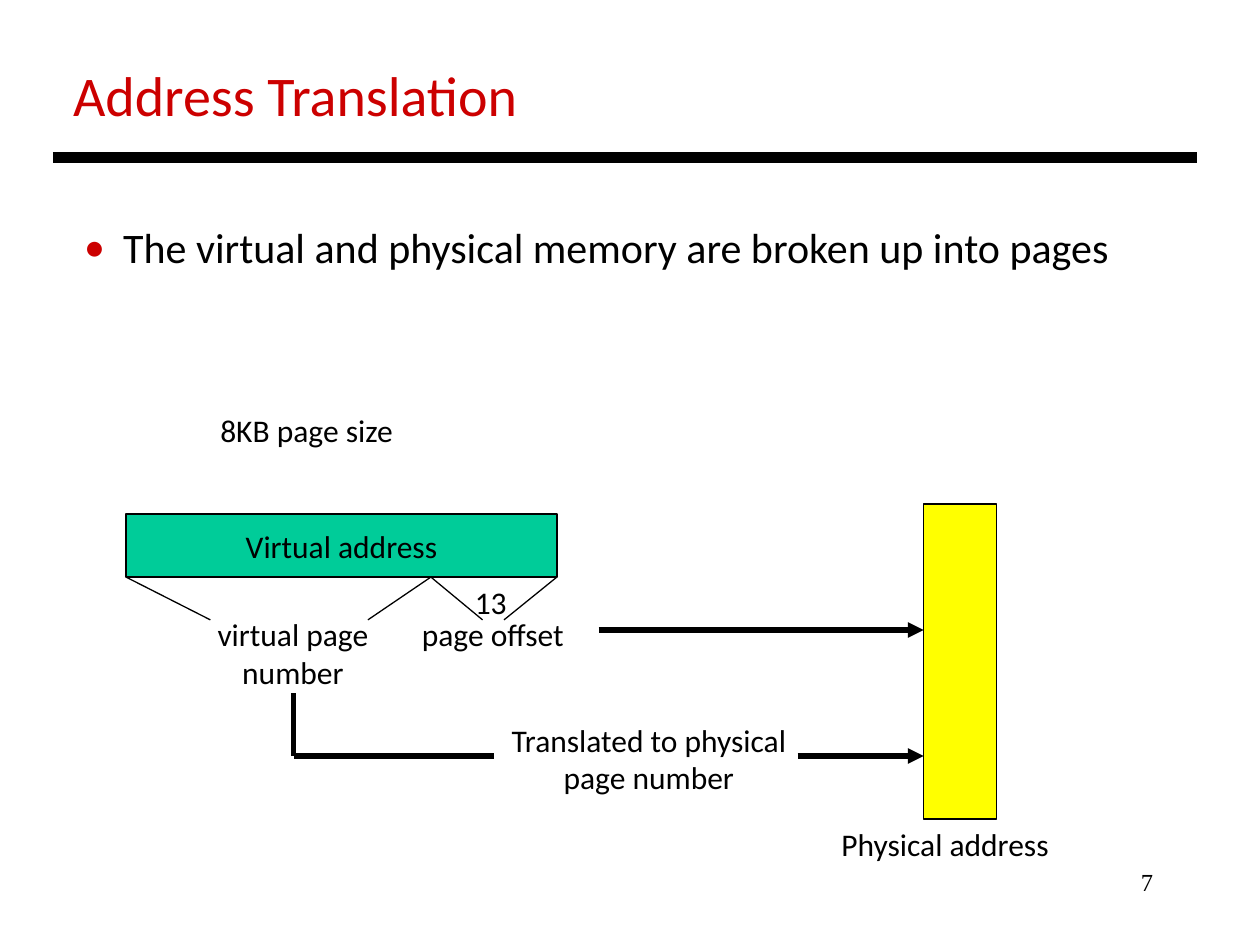
import pptx
import pptx.util
import pptx.dml.color
import pptx.enum.shapes
import pptx.enum.text
import lxml.etree
from pptx.util import Inches

ALIGN = pptx.enum.text.PP_ALIGN
ANCHOR = pptx.enum.text.MSO_ANCHOR
BLACK, RED, GREEN, YELLOW = "000000", "CC0000", "00CC99", "FFFF00"


def color(hex_code):
    return pptx.dml.color.RGBColor.from_string(hex_code)


def add_xml(parent, tag, **attributes):
    return lxml.etree.SubElement(parent, pptx.oxml.ns.qn(tag), attributes)


def write(shape, text, size=18, font="Calibri", ink=BLACK, align=ALIGN.LEFT, anchor=ANCHOR.TOP):
    frame = shape.text_frame
    frame.text = text
    frame.word_wrap = False
    frame.vertical_anchor = anchor
    for paragraph in frame.paragraphs:
        paragraph.alignment = align
        for run in paragraph.runs:
            run.font.size = pptx.util.Pt(size)
            run.font.name = font
            run.font.color.rgb = color(ink)


def add_label(slide, text, left, top, width, height=0.4, **style):
    label = slide.shapes.add_textbox(Inches(left), Inches(top), Inches(width), Inches(height))
    write(label, text, **style)
    return label


def add_block(slide, left, top, width, height, fill):
    block = slide.shapes.add_shape(
        pptx.enum.shapes.MSO_SHAPE.RECTANGLE,
        Inches(left), Inches(top), Inches(width), Inches(height))
    block.shadow.inherit = False
    block.fill.solid()
    block.fill.fore_color.rgb = color(fill)
    block.line.color.rgb = color(BLACK)
    block.line.width = pptx.util.Pt(0.75)
    return block


def add_line(slide, start, end, weight, arrow=False):
    line = slide.shapes.add_connector(
        pptx.enum.shapes.MSO_CONNECTOR.STRAIGHT, *map(Inches, start + end))
    line.line.color.rgb = color(BLACK)
    line.line.width = pptx.util.Pt(weight)
    if arrow:
        add_xml(line.line._get_or_add_ln(), "a:tailEnd", type="triangle")
    add_xml(line._element.spPr, "a:effectLst")


def add_header(slide, left, top, width):
    title = slide.shapes.title
    title.left, title.top = Inches(left + 0.06), Inches(top)
    title.width, title.height = Inches(3.77), Inches(0.64)
    write(title, "Address Translation", size=32, ink=RED)
    title.text_frame.auto_size = pptx.enum.text.MSO_AUTO_SIZE.NONE
    rule_y = top + 0.82
    add_line(slide, (left, rule_y), (left + width, rule_y), 6)


def add_bullet(slide, left, top, width):
    bullet = add_label(slide, "The virtual and physical memory are broken up into pages",
                       left, top, width, 0.5, size=24)
    properties = bullet.text_frame.paragraphs[0]._p.get_or_add_pPr()
    properties.set("marL", str(Inches(0.31)))
    properties.set("indent", str(-Inches(0.31)))
    bullet_color = add_xml(properties, "a:buClr")
    add_xml(bullet_color, "a:srgbClr", val=RED)
    add_xml(properties, "a:buFont", typeface="Calibri")
    add_xml(properties, "a:buChar", char="•")


def add_virtual_address(slide, left, top, width, height):
    """Address bar with lines that fan in to its two fields."""
    address = add_block(slide, left, top, width, height, GREEN)
    write(address, "Virtual address", align=ALIGN.CENTER, anchor=ANCHOR.MIDDLE)
    add_label(slide, "8KB page size", left + 0.65, top - 0.87, 1.59)

    bottom = top + height
    split, right = left + 2.42, left + width
    for edge, field_edge in ((left, left + 0.67), (split, left + 1.92),
                             (split, left + 2.83), (right, left + 3)):
        add_line(slide, (edge, bottom), (field_edge, bottom + 0.34), 0.75)
    add_label(slide, "13", left + 2.67, bottom, 0.46)
    add_label(slide, "page offset", left + 2.25, bottom + 0.25, 1.35)
    add_label(slide, "virtual page\nnumber", left + 0.62, bottom + 0.25, 1.41, 0.71,
              align=ALIGN.CENTER)


def add_physical_address(slide, left, top, width, height):
    add_block(slide, left, top, width, height, YELLOW)
    add_label(slide, "Physical address", left - 0.75, top + height, 1.86)


def add_translation(slide, left, top, right):
    """Paths from the page offset and the page number to the physical address."""
    page_y = top + 1
    add_line(slide, (left + 2.42, top), (right, top), 3, arrow=True)
    add_line(slide, (left, top + 0.5), (left, page_y), 3)
    add_line(slide, (left, page_y), (left + 1.59, page_y), 3)
    add_line(slide, (right - 1, page_y), (right, page_y), 3, arrow=True)
    add_label(slide, "Translated to physical\npage number", left + 1.62, page_y - 0.33,
              2.4, 0.71, align=ALIGN.CENTER)


def main():
    deck = pptx.Presentation()
    deck.slide_width, deck.slide_height = Inches(10), Inches(7.5)
    slide = deck.slides.add_slide(deck.slide_layouts[5])
    add_header(slide, 0.42, 0.43, 9.08)
    add_bullet(slide, 0.57, 1.71, 8.34)
    add_virtual_address(slide, 1, 4.08, 3.42, 0.5)
    add_physical_address(slide, 7.33, 4, 0.58, 2.5)
    add_translation(slide, 2.33, 5, 7.33)
    add_label(slide, "7", 7.17, 6.83, 2.08, 0.5, size=14, font="Times New Roman",
              align=ALIGN.RIGHT)
    deck.save("out.pptx")


if __name__ == "__main__":
    main()
